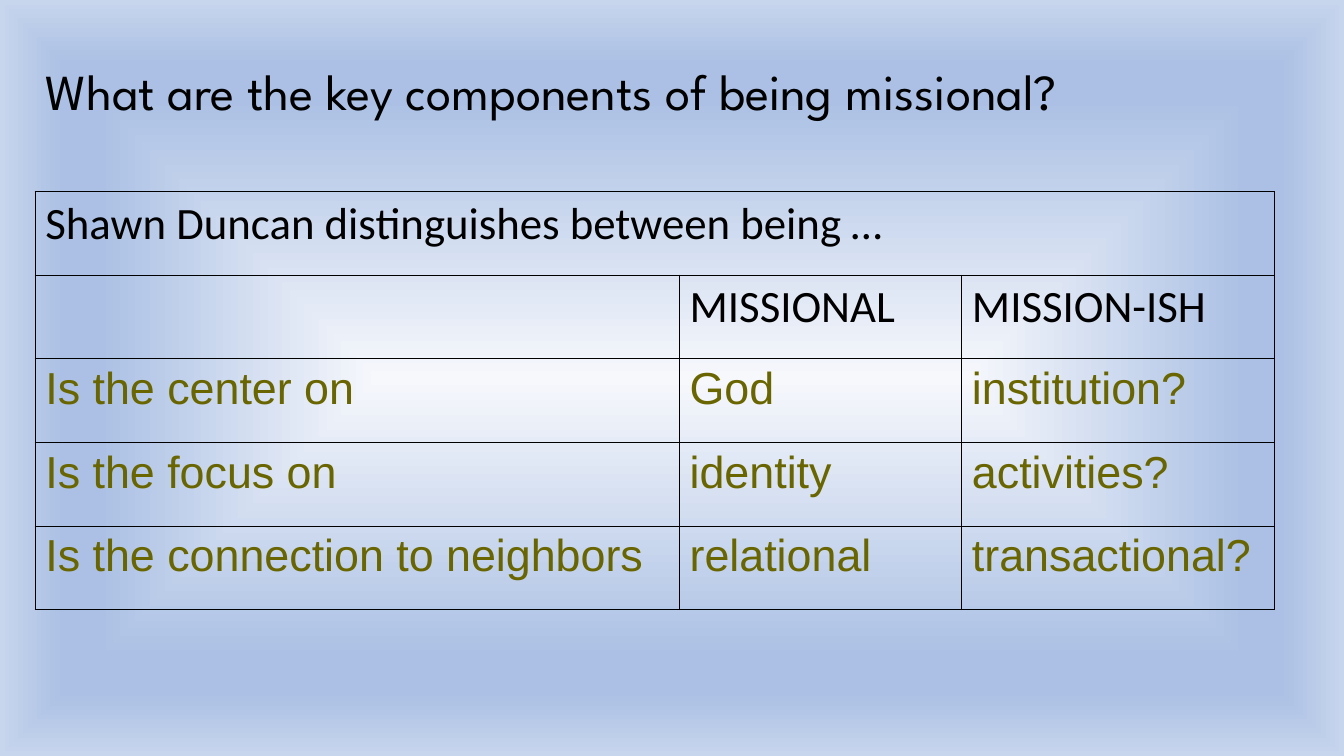
from typing import NamedTuple

from lxml import etree
from pptx import Presentation
from pptx.dml.color import RGBColor
from pptx.oxml import parse_xml
from pptx.oxml.ns import nsdecls, qn
from pptx.util import Inches, Pt

BLACK = RGBColor(0x00, 0x00, 0x00)
OLIVE = RGBColor(0x69, 0x65, 0x00)
PALE = RGBColor(0xF6, 0xF8, 0xFC)
BLUE = RGBColor(0xAB, 0xC0, 0xE4)
MIST = RGBColor(0xC7, 0xD5, 0xED)

LEFT, WIDTH = 0.35, 12.29
STOPS = [(0, PALE), (74, BLUE), (83, BLUE), (100, MIST)]
COLS = [6.39, 2.8, 3.1]
HIGH = 0.83


class Style(NamedTuple):
    font: str
    size: int
    color: RGBColor


class Row(NamedTuple):
    texts: list[str]
    style: Style


TITLE = Style("League Spartan", 36, BLACK)
HEAD = Style("Calibri", 32, BLACK)
BODY = Style("Arial", 32, OLIVE)

ROWS = [
    Row(["Shawn Duncan distinguishes between being …", "", ""], HEAD),
    Row(["", "MISSIONAL", "MISSION-ISH"], HEAD),
    Row(["Is the center on", "God", "institution?"], BODY),
    Row(["Is the focus on", "identity", "activities?"], BODY),
    Row(["Is the connection to neighbors", "relational", "transactional?"], BODY),
]


def write(frame, text: str, style: Style) -> None:
    frame.text = text
    for run in frame.paragraphs[0].runs:
        run.font.name = style.font
        run.font.size = Pt(style.size)
        run.font.color.rgb = style.color


def paint(slide) -> None:
    """Fill the background with a gradient from the centre outwards."""
    fill = slide.background.fill
    fill.solid()
    stops = "".join(
        f'<a:gs pos="{pos * 1000}"><a:srgbClr val="{color}"/></a:gs>'
        for pos, color in STOPS
    )
    grad = parse_xml(
        f'<a:gradFill {nsdecls("a")} rotWithShape="1"><a:gsLst>{stops}</a:gsLst>'
        '<a:path path="rect"><a:fillToRect l="50000" t="50000" r="50000" b="50000"/>'
        "</a:path></a:gradFill>"
    )
    solid = next(slide.element.iter(qn("a:solidFill")))
    solid.getparent().replace(solid, grad)


def frame_cell(cell) -> None:
    """Give a cell thin black borders and no fill."""
    cell.fill.background()
    props = cell._tc.get_or_add_tcPr()
    for spot, side in enumerate(("lnL", "lnR", "lnT", "lnB")):
        line = etree.Element(qn(f"a:{side}"), w=str(Pt(1)))
        solid = etree.SubElement(line, qn("a:solidFill"))
        etree.SubElement(solid, qn("a:srgbClr"), val=str(BLACK))
        props.insert(spot, line)


def add_grid(slide) -> None:
    table = slide.shapes.add_table(
        len(ROWS), len(COLS), Inches(LEFT), Inches(1.9),
        Inches(WIDTH), Inches(HIGH * len(ROWS)),
    ).table
    table.first_row = False
    table.horz_banding = False
    for col, width in zip(table.columns, COLS):
        col.width = Inches(width)
    for line, row in zip(table.rows, ROWS):
        line.height = Inches(HIGH)
        for cell, text in zip(line.cells, row.texts):
            frame_cell(cell)
            write(cell.text_frame, text, row.style)
    table.cell(0, 0).merge(table.cell(0, len(COLS) - 1))


def main() -> None:
    deck = Presentation()
    deck.slide_width, deck.slide_height = Inches(13.33), Inches(7.5)
    slide = deck.slides.add_slide(deck.slide_layouts[6])
    paint(slide)

    # Title
    box = slide.shapes.add_textbox(
        Inches(LEFT), Inches(0.55), Inches(WIDTH), Inches(0.71)
    )
    box.text_frame.word_wrap = True
    write(box.text_frame, "What are the key components of being missional?", TITLE)

    # Comparison table
    add_grid(slide)
    deck.save("out.pptx")


if __name__ == "__main__":
    main()
